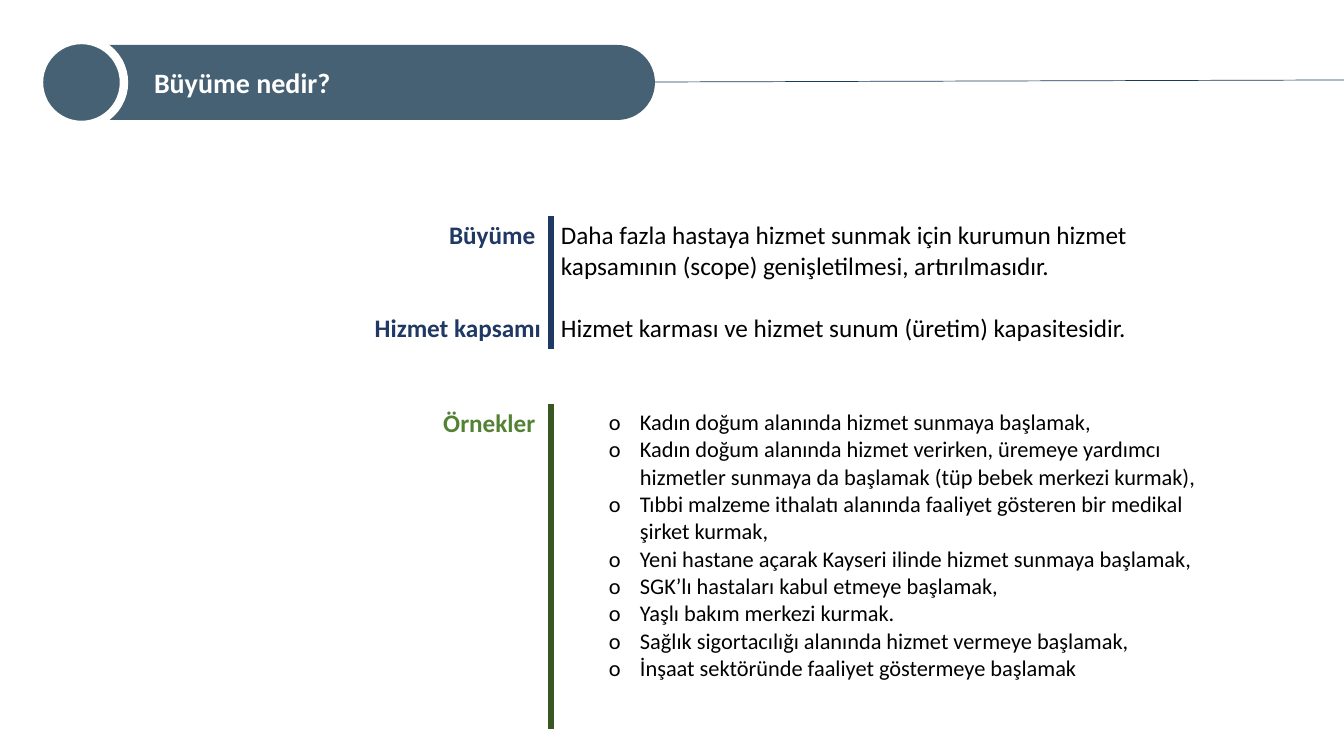
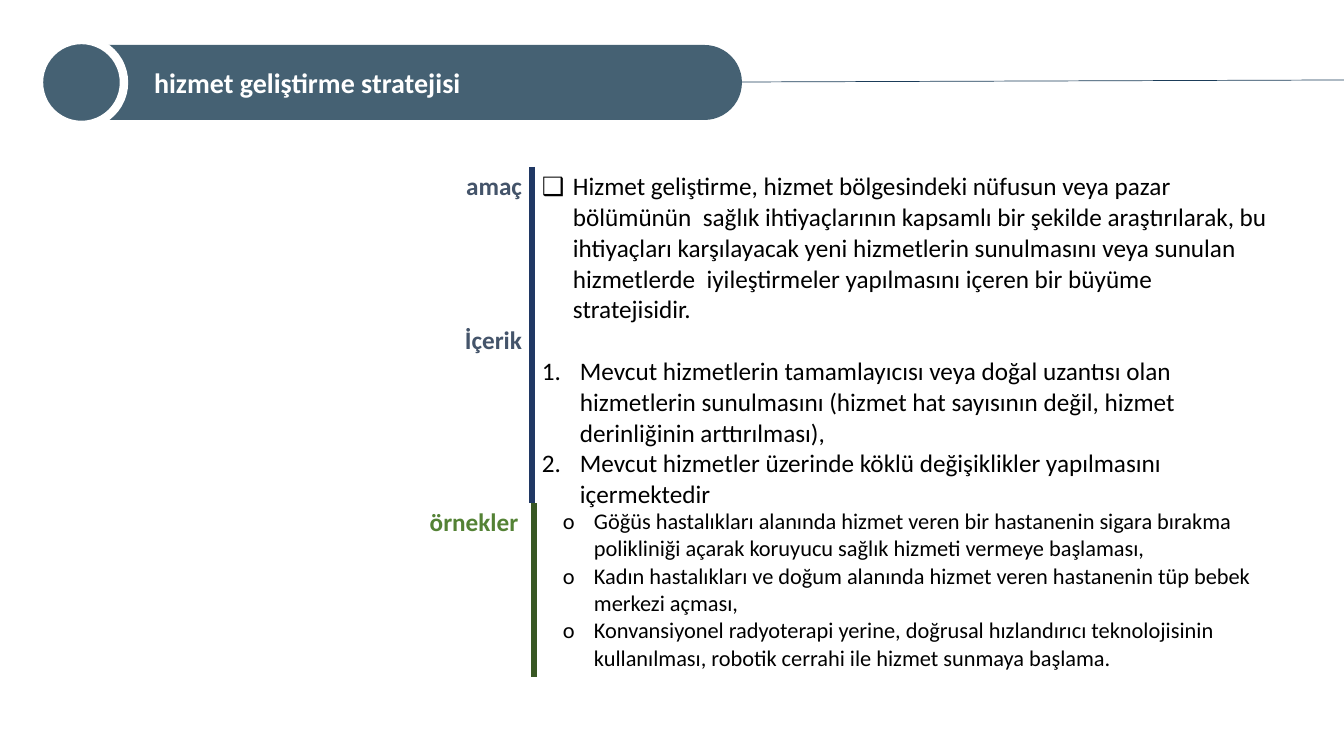
import dataclasses

import lxml.etree
import pptx
import pptx.dml.color
import pptx.enum.shapes
import pptx.enum.text
import pptx.oxml.ns
import pptx.util

EMU_PER_PX = 12192000 / 1344
PAGE_WIDTH, PAGE_HEIGHT = 1344, 756
NO_GRID_STYLE = "{2D5ABB26-0587-4C30-8999-92F81FD0307C}"


@dataclasses.dataclass(frozen=True)
class Theme:
    font: str = "Calibri"
    band: str = "456173"
    rule: str = "1B3C59"
    white: str = "FFFFFF"
    text: str = "000000"
    navy: str = "203864"
    slate: str = "44546A"
    green: str = "548235"
    dark_green: str = "385723"
    title_size: int = 20
    body_size: int = 18
    example_size: int = 16
    body_line: int = 22  # height of one body line in points
    bar_width: float = 4.5


@dataclasses.dataclass(frozen=True)
class Bullet:
    mark: str  # a character, or "1." for automatic numbers
    indent: int
    hanging: int


@dataclasses.dataclass(frozen=True)
class Item:
    text: str
    bullet: Bullet | None = None
    lines_before: int = 0


THEME = Theme()
BOX_BULLET = Bullet("❑", 31, 31)
NUMBER = Bullet("1.", 38, 38)


# Units, colours and XML
def px(length):
    return pptx.util.Emu(round(length * EMU_PER_PX))


def rgb(colour):
    return pptx.dml.color.RGBColor.from_string(colour)


def add_child(parent, tag, **attributes):
    child = lxml.etree.SubElement(parent, pptx.oxml.ns.qn(tag))
    for name, value in attributes.items():
        child.set(name, str(value))
    return child


# Text
def write(para, text, *, size, colour, bold=False, align=None, bullet=None,
          lines_before=0):
    span = para.add_run()
    span.text = text
    span.font.name = THEME.font
    span.font.size = pptx.util.Pt(size)
    span.font.bold = bold
    span.font.color.rgb = rgb(colour)
    para.alignment = align or pptx.enum.text.PP_ALIGN.LEFT
    if lines_before:
        para.space_before = pptx.util.Pt(lines_before * THEME.body_line)
    if bullet:
        set_bullet(para, bullet)


def set_bullet(para, bullet):
    properties = para._p.get_or_add_pPr()
    properties.set("marL", str(px(bullet.indent)))
    properties.set("indent", str(-px(bullet.hanging)))
    add_child(properties, "a:buFont", typeface=THEME.font)
    if bullet.mark == "1.":
        add_child(properties, "a:buAutoNum", type="arabicPeriod")
    else:
        add_child(properties, "a:buChar", char=bullet.mark)


# Heading: band, disc, title and rule
def add_filled_shape(page, kind, left, top, width, height):
    shape = page.shapes.add_shape(kind, px(left), px(top), px(width), px(height))
    shape.shadow.inherit = False
    shape.fill.solid()
    shape.fill.fore_color.rgb = rgb(THEME.band)
    shape.line.fill.background()
    return shape


def add_rule(page, start, end):
    rule = page.shapes.add_connector(
        pptx.enum.shapes.MSO_CONNECTOR.STRAIGHT, *map(px, start + end))
    rule.line.color.rgb = rgb(THEME.rule)
    rule.line.width = pptx.util.Pt(0.5)
    add_child(rule.element.spPr, "a:effectLst")


def add_page(deck, title, band_width):
    page = deck.slides.add_slide(deck.slide_layouts.get_by_name("Title Only"))
    kinds = pptx.enum.shapes.MSO_SHAPE
    left, top, height = 39, 45, 75
    band = add_filled_shape(page, kinds.ROUNDED_RECTANGLE, left, top, band_width, height)
    band.adjustments[0] = 0.5
    disc = add_filled_shape(page, kinds.OVAL, left, 40, 85, 85)
    disc.line.color.rgb = rgb(THEME.white)
    disc.line.width = pptx.util.Pt(6)
    add_rule(page, (left + band_width, 82), (PAGE_WIDTH, 80))

    box = page.shapes.title
    box.left, box.top = px(154), px(top)
    box.width, box.height = px(band_width - 154), px(height)
    frame = box.text_frame
    frame.margin_left = frame.margin_right = 0
    frame.vertical_anchor = pptx.enum.text.MSO_ANCHOR.MIDDLE
    frame.auto_size = pptx.enum.text.MSO_AUTO_SIZE.NONE
    write(frame.paragraphs[0], title, size=THEME.title_size,
          colour=THEME.white, bold=True)
    box.element.getparent().append(box.element)  # bring the title to the front
    return page


# Tables: labels on the left, a coloured bar, text on the right
def set_bar(cell, side, colour):
    line = lxml.etree.Element(pptx.oxml.ns.qn(side))
    line.set("w", str(pptx.util.Pt(THEME.bar_width)))
    fill = add_child(line, "a:solidFill")
    add_child(fill, "a:srgbClr", val=colour)
    cell._tc.get_or_add_tcPr().insert(0, line)


def format_cell(cell, filled=True):
    cell.margin_left = cell.margin_right = px(10)
    cell.margin_top = cell.margin_bottom = px(5)
    if filled:
        cell.fill.solid()
        cell.fill.fore_color.rgb = rgb(THEME.white)
    else:
        cell.fill.background()


def write_items(cell, items, **text_format):
    frame = cell.text_frame
    for index, item in enumerate(items):
        para = frame.add_paragraph() if index else frame.paragraphs[0]
        write(para, item.text, bullet=item.bullet,
              lines_before=item.lines_before, **text_format)


def add_label_table(page, left, top, widths, heights, labels, items, *,
                    label_colour, bar_colour, size=THEME.body_size, filled=True):
    frame = page.shapes.add_table(len(heights), 2, px(left), px(top),
                                  px(sum(widths)), px(sum(heights)))
    table = frame.table
    table.first_row = table.horz_banding = False
    frame.element.find(".//" + pptx.oxml.ns.qn("a:tableStyleId")).text = NO_GRID_STYLE
    for column, width in zip(table.columns, widths):
        column.width = px(width)
    for index, height in enumerate(heights):
        table.rows[index].height = px(height)
        format_cell(table.cell(index, 0))
        format_cell(table.cell(index, 1), filled)

    label_cell, text_cell = table.cell(0, 0), table.cell(0, 1)
    write_items(label_cell, labels, size=THEME.body_size, colour=label_colour,
                bold=True, align=pptx.enum.text.PP_ALIGN.RIGHT)
    write_items(text_cell, items, size=size, colour=THEME.text)
    set_bar(text_cell, "a:lnL", bar_colour)
    if len(heights) > 1:
        label_cell.merge(table.cell(len(heights) - 1, 0))
    else:
        set_bar(label_cell, "a:lnR", bar_colour)


def add_examples(page, left, top, widths, heights, label, examples, indent, **options):
    bullet = Bullet("o", indent, 31)
    add_label_table(page, left, top, widths, heights, [Item(label)],
                    [Item(text, bullet) for text in examples],
                    label_colour=THEME.green, bar_colour=THEME.dark_green,
                    size=THEME.example_size, **options)


# Slides
def add_growth_page(deck):
    page = add_page(deck, "Büyüme nedir?", 616)
    left, widths = 331, (220, 676)
    add_label_table(page, left, 216, widths, [133], [
        Item("Büyüme "),
        Item("Hizmet kapsamı", lines_before=2),
    ], [
        Item("Daha fazla hastaya hizmet sunmak için kurumun hizmet kapsamının "
             "(scope) genişletilmesi, artırılmasıdır."),
        Item("Hizmet karması ve hizmet sunum (üretim) kapasitesidir.", lines_before=1),
    ], label_colour=THEME.navy, bar_colour=THEME.navy)
    add_examples(page, left, 404, widths, [284, 31], "Örnekler ", [
        "Kadın doğum alanında hizmet sunmaya başlamak,",
        "Kadın doğum alanında hizmet verirken, üremeye yardımcı hizmetler "
        "sunmaya da başlamak (tüp bebek merkezi kurmak),",
        "Tıbbi malzeme ithalatı alanında faaliyet gösteren bir medikal şirket kurmak,",
        "Yeni hastane açarak Kayseri ilinde hizmet sunmaya başlamak,",
        "SGK’lı hastaları kabul etmeye başlamak,",
        "Yaşlı bakım merkezi kurmak.",
        "Sağlık sigortacılığı alanında hizmet vermeye başlamak,",
        "İnşaat sektöründe faaliyet göstermeye başlamak",
    ], indent=79)


def add_strategy_page(deck):
    page = add_page(deck, "hizmet geliştirme stratejisi", 703)
    add_label_table(page, 343, 167, (189, 754), [312], [
        Item("amaç"),
        Item("İçerik", lines_before=4),
    ], [
        Item("Hizmet geliştirme, hizmet bölgesindeki nüfusun veya pazar "
             "bölümünün  sağlık ihtiyaçlarının kapsamlı bir şekilde araştırılarak, "
             "bu ihtiyaçları karşılayacak yeni hizmetlerin sunulmasını veya sunulan "
             "hizmetlerde  iyileştirmeler yapılmasını içeren bir büyüme "
             "stratejisidir.", BOX_BULLET),
        Item("Mevcut hizmetlerin tamamlayıcısı veya doğal uzantısı olan hizmetlerin "
             "sunulmasını (hizmet hat sayısının değil, hizmet derinliğinin "
             "arttırılması),", NUMBER, lines_before=1),
        Item("Mevcut hizmetler üzerinde köklü değişiklikler yapılmasını "
             "içermektedir", NUMBER),
    ], label_colour=THEME.slate, bar_colour=THEME.navy)
    # The text cell stays clear so that the line above it is not cut
    add_examples(page, 181, 503, (353, 768), [174], "örnekler ", [
        "Göğüs hastalıkları alanında hizmet veren bir hastanenin sigara bırakma "
        "polikliniği açarak koruyucu sağlık hizmeti vermeye başlaması,",
        "Kadın hastalıkları ve doğum alanında hizmet veren hastanenin tüp bebek "
        "merkezi açması,",
        "Konvansiyonel radyoterapi yerine, doğrusal hızlandırıcı teknolojisinin "
        "kullanılması, robotik cerrahi ile hizmet sunmaya başlama.",
    ], indent=50, filled=False)


def main():
    deck = pptx.Presentation()
    deck.slide_width, deck.slide_height = px(PAGE_WIDTH), px(PAGE_HEIGHT)
    add_growth_page(deck)
    add_strategy_page(deck)
    deck.save("out.pptx")


if __name__ == "__main__":
    main()
